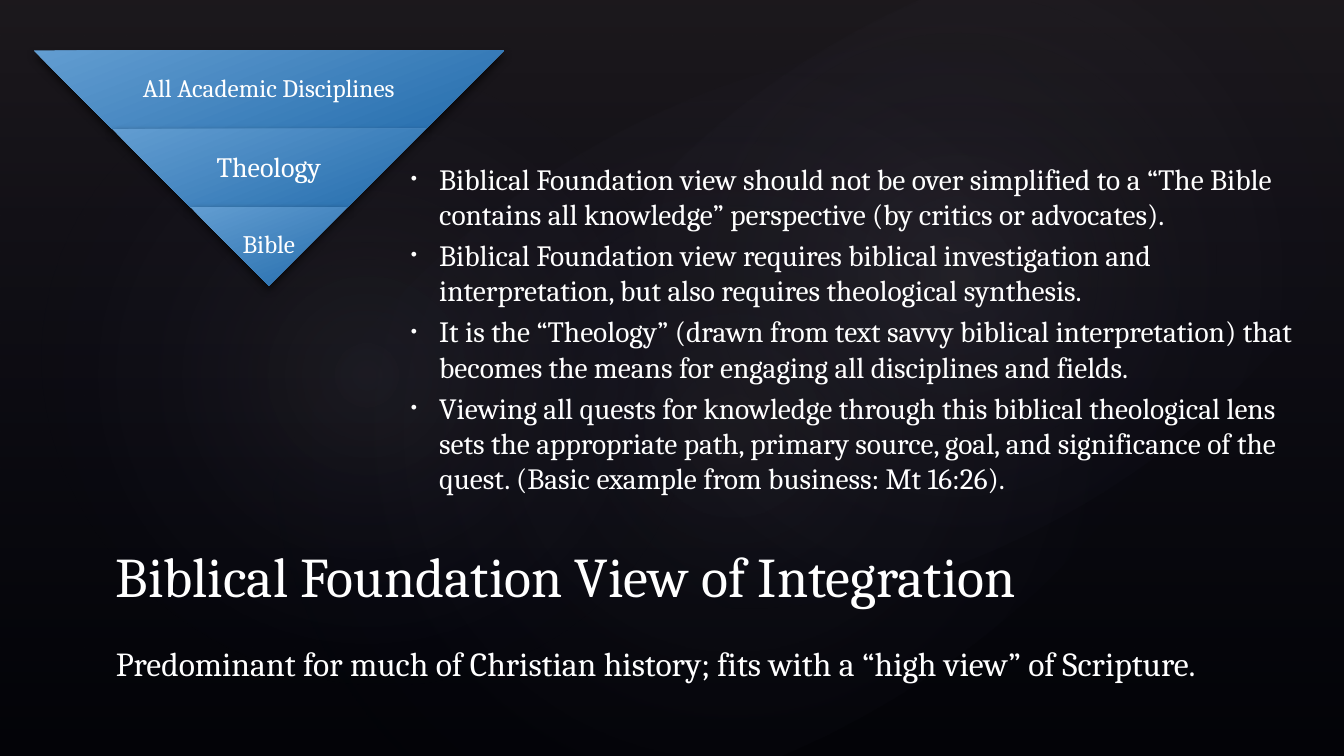
from lxml import etree
from pptx import Presentation
from pptx.dml.color import RGBColor
from pptx.enum.shapes import MSO_SHAPE
from pptx.enum.text import MSO_ANCHOR, PP_ALIGN
from pptx.oxml.ns import qn
from pptx.util import Pt

RECT, OVAL, TRAPEZOID = MSO_SHAPE.RECTANGLE, MSO_SHAPE.OVAL, MSO_SHAPE.TRAPEZOID
TOP, MIDDLE, BOTTOM = MSO_ANCHOR.TOP, MSO_ANCHOR.MIDDLE, MSO_ANCHOR.BOTTOM
LEFT, CENTER = PP_ALIGN.LEFT, PP_ALIGN.CENTER
FONT = "Cambria"
COLORS = {
    "black": "000000", "white": "FFFFFF", "mauve": "504652", "navy": "242852",
    "glow": "C4BCC6", "light_blue": "629DD1", "blue": "256DAD",
}

prs = Presentation()
prs.slide_width, prs.slide_height = Pt(960), Pt(540)
s = prs.slides.add_slide(prs.slide_layouts[6])
s.background.fill.solid()
s.background.fill.fore_color.rgb = RGBColor.from_string(COLORS["black"])


def add_gradient_shape(kind, box, stops, angle=None, rotation=0):
    """Add a borderless shape; stops are (position %, colour, opacity %), radial without an angle."""
    sp = s.shapes.add_shape(kind, *[Pt(v) for v in box])
    sp.rotation = rotation
    sp.shadow.inherit = False
    sp.line.fill.background()
    sp.fill.background()
    grad = etree.Element(qn("a:gradFill"), rotWithShape="0")
    stop_list = etree.SubElement(grad, qn("a:gsLst"))
    for pos, color, opacity in stops:
        gs = etree.SubElement(stop_list, qn("a:gs"), pos=str(pos * 1000))
        clr = etree.SubElement(gs, qn("a:srgbClr"), val=COLORS[color])
        if opacity < 100:
            etree.SubElement(clr, qn("a:alpha"), val=str(opacity * 1000))
    if angle is None:
        path = etree.SubElement(grad, qn("a:path"), path="circle")
        etree.SubElement(path, qn("a:fillToRect"), l="50000", t="50000", r="50000", b="50000")
    else:
        etree.SubElement(grad, qn("a:lin"), ang=str(angle * 60000), scaled="0")
    sp_pr = sp._element.spPr
    sp_pr.replace(sp_pr.find(qn("a:noFill")), grad)
    return sp


def add_text(paragraphs, box, size, anchor=TOP, align=LEFT, margins=(7.2, 3.6, 7.2, 3.6),
             line_spacing=1.0, space_before=0, bullet=False):
    tf = s.shapes.add_textbox(*[Pt(v) for v in box]).text_frame
    tf.word_wrap = True
    tf.vertical_anchor = anchor
    tf.margin_left, tf.margin_top, tf.margin_right, tf.margin_bottom = [Pt(m) for m in margins]
    for i, text in enumerate(paragraphs):
        p = tf.add_paragraph() if i else tf.paragraphs[0]
        p.alignment = align
        p.line_spacing = line_spacing
        p.space_before = Pt(space_before)
        if bullet:
            p_pr = p._p.get_or_add_pPr()
            p_pr.set("marL", str(Pt(21.6)))
            p_pr.set("indent", str(-Pt(20.2)))
            etree.SubElement(p_pr, qn("a:buSzPct"), val="60000")
            etree.SubElement(p_pr, qn("a:buFont"), typeface="Arial")
            etree.SubElement(p_pr, qn("a:buChar"), char="•")
        r = p.add_run()
        r.text = text
        r.font.name = FONT
        r.font.size = Pt(size)
        r.font.color.rgb = RGBColor.from_string(COLORS["white"])


# Backdrop: a vertical wash and three soft glows
add_gradient_shape(RECT, (0, 0, 960, 540), [(0, "mauve", 36), (100, "navy", 10)], angle=90)
for box, rotation, opacity in [
    ((144, 82, 760, 449), 328.7, 7),
    ((44, 33, 436, 470), 294.3, 8),
    ((344, 9.4, 680, 374), 328.7, 8),
]:
    add_gradient_shape(OVAL, box, [(0, "glow", opacity), (58, "navy", 0)], rotation=rotation)

# Main text
add_text([
    "Biblical Foundation view should not be over simplified to a “The Bible contains all "
    "knowledge” perspective (by critics or advocates).",
    "Biblical Foundation view requires biblical investigation and interpretation, but also "
    "requires theological synthesis.",
    "It is the “Theology” (drawn from text savvy biblical interpretation) that becomes the "
    "means for engaging all disciplines and fields.",
    "Viewing all quests for knowledge through this biblical theological lens sets the "
    "appropriate path, primary source, goal, and significance of the quest. (Basic example "
    "from business: Mt 16:26).",
], (285, 114, 655, 241), 21, anchor=MIDDLE, space_before=4.2, bullet=True)
add_text(["Biblical Foundation View of Integration"], (75.6, 366, 792, 72), 40, anchor=BOTTOM)
add_text(["Predominant for much of Christian history; fits with a “high view” of Scripture."],
         (75.6, 456, 862, 36), 24)

# Inverted pyramid: each band is narrower by its height on both sides
CENTER_X, PYRAMID_TOP, PYRAMID_W, BAND_H = 192, 36, 336, 56
for i, (label, size, label_share, top_margin) in enumerate([
    ("All Academic Disciplines", 18, 0.65, 2),
    ("Theology", 20, 0.65, 2),
    ("Bible", 18, 1, 0),
]):
    width = PYRAMID_W - 2 * BAND_H * i
    y = PYRAMID_TOP + BAND_H * i
    band = add_gradient_shape(TRAPEZOID, (CENTER_X - width / 2, y, width, BAND_H),
                              [(0, "light_blue", 100), (100, "blue", 100)],
                              angle=69, rotation=180)
    band.adjustments[0] = 1
    effects = band._element.spPr.find(qn("a:effectLst"))
    shadow = etree.SubElement(effects, qn("a:outerShdw"), blurRad=str(Pt(6)), dist=str(Pt(3)),
                              dir="5400000", rotWithShape="0")
    clr = etree.SubElement(shadow, qn("a:srgbClr"), val=COLORS["black"])
    etree.SubElement(clr, qn("a:alpha"), val="60000")
    label_w = width * label_share
    add_text([label], (CENTER_X - label_w / 2, y, label_w, BAND_H), size, anchor=MIDDLE,
             align=CENTER, margins=(2, top_margin, 2, 2), line_spacing=0.9)

prs.save("out.pptx")
